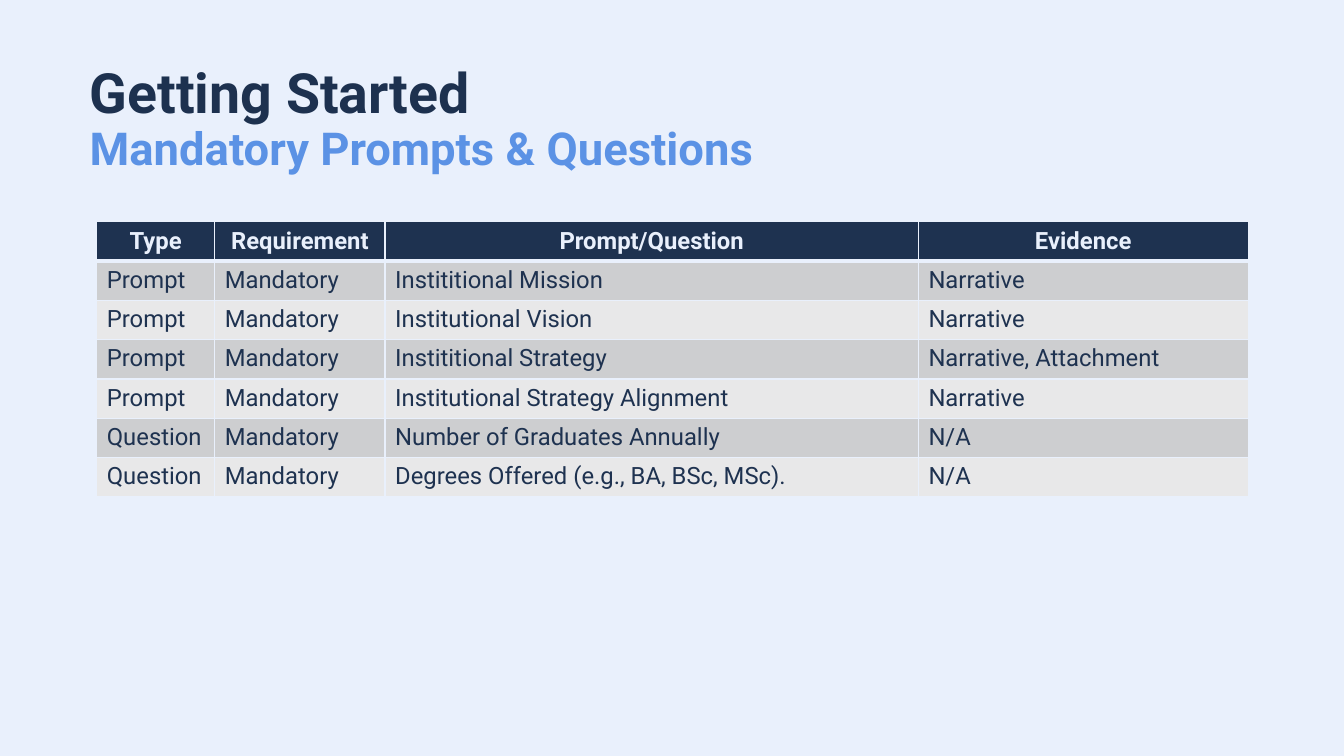
from pptx import Presentation
from pptx.dml.color import RGBColor
from pptx.enum.text import MSO_ANCHOR as Anchor, PP_ALIGN as Align
from pptx.oxml import parse_xml
from pptx.oxml.ns import nsdecls
from pptx.util import Inches, Pt

NAVY, INK, BLUE, PALE = "1E3250", "1D314F", "5B92E5", "E9F0FC"
BANDS = ["CDCED0", "E8E8E9"]


def color(hex_code):
    return RGBColor.from_string(hex_code)


class SlideBuilder:
    font_name = "Roboto"

    def __init__(self, slide):
        self.slide = slide
        slide.background.fill.solid()
        slide.background.fill.fore_color.rgb = color(PALE)

    def style(self, font, size, hex_code, bold):
        font.name, font.size, font.bold = self.font_name, Pt(size), bold
        font.color.rgb = color(hex_code)

    def title(self, heading, subheading, left, top, width, height):
        title = self.slide.shapes.title
        title.left, title.top = Inches(left), Inches(top)
        title.width, title.height = Inches(width), Inches(height)
        frame = title.text_frame
        frame.word_wrap = True
        frame.vertical_anchor = Anchor.MIDDLE
        frame.margin_left = frame.margin_right = Inches(0.13)
        frame.margin_top = frame.margin_bottom = Inches(0.13)
        paragraph = frame.paragraphs[0]
        paragraph.alignment = Align.LEFT
        paragraph.line_spacing = 0.9
        for text, size, hex_code in ((heading, 39.6, INK), (subheading, 32.4, BLUE)):
            if paragraph.runs:
                paragraph.add_line_break()
            run = paragraph.add_run()
            run.text = text
            self.style(run.font, size, hex_code, True)

    def borders(self, cell, widths):
        """Draw the cell borders; they come before the fill in the XML."""
        properties = cell._tc.get_or_add_tcPr()
        for side, points in widths.items():
            properties.append(parse_xml(
                f'<a:{side} {nsdecls("a")} w="{Pt(points)}"><a:solidFill>'
                f'<a:srgbClr val="{PALE}"/></a:solidFill></a:{side}>'))

    def table(self, rows, left, top, column_widths, row_height):
        table = self.slide.shapes.add_table(
            len(rows), len(column_widths), Inches(left), Inches(top),
            Inches(sum(column_widths)), Inches(row_height * len(rows))).table
        for column, width in zip(table.columns, column_widths):
            column.width = Inches(width)
        for i, texts in enumerate(rows):
            header = i == 0
            table.rows[i].height = Inches(row_height)
            for j, text in enumerate(texts):
                cell = table.cell(i, j)
                self.borders(cell, {"lnL": 1, "lnR": 1, "lnT": 3 if i == 1 else 1,
                                    "lnB": 3 if header else 1})
                cell.fill.solid()
                cell.fill.fore_color.rgb = color(NAVY if header else BANDS[(i - 1) % 2])
                cell.vertical_anchor = Anchor.MIDDLE if header else Anchor.TOP
                cell.text = text
                paragraph = cell.text_frame.paragraphs[0]
                paragraph.alignment = Align.CENTER if header else Align.LEFT
                self.style(paragraph.font, 17, PALE if header else NAVY, header)


def main():
    deck = Presentation()
    deck.slide_width, deck.slide_height = Inches(13.33), Inches(7.5)
    builder = SlideBuilder(deck.slides.add_slide(deck.slide_layouts[5]))

    # Heading
    builder.title("Getting Started", "Mandatory Prompts & Questions",
                  0.76, 0.5, 11.71, 1.39)

    # Prompts and questions
    requirements = [
        ("Type", "Requirement", "Prompt/Question", "Evidence"),
        ("Prompt", "Mandatory", "Instititional Mission", "Narrative"),
        ("Prompt", "Mandatory", "Institutional Vision", "Narrative"),
        ("Prompt", "Mandatory", "Instititional Strategy", "Narrative, Attachment"),
        ("Prompt", "Mandatory", "Institutional Strategy Alignment", "Narrative"),
        ("Question", "Mandatory", "Number of Graduates Annually", "N/A"),
        ("Question", "Mandatory", "Degrees Offered (e.g., BA, BSc, MSc).", "N/A"),
    ]
    builder.table(requirements, 0.96, 2.2, [1.17, 1.69, 5.29, 3.27], 0.39)

    deck.save("out.pptx")


if __name__ == "__main__":
    main()
